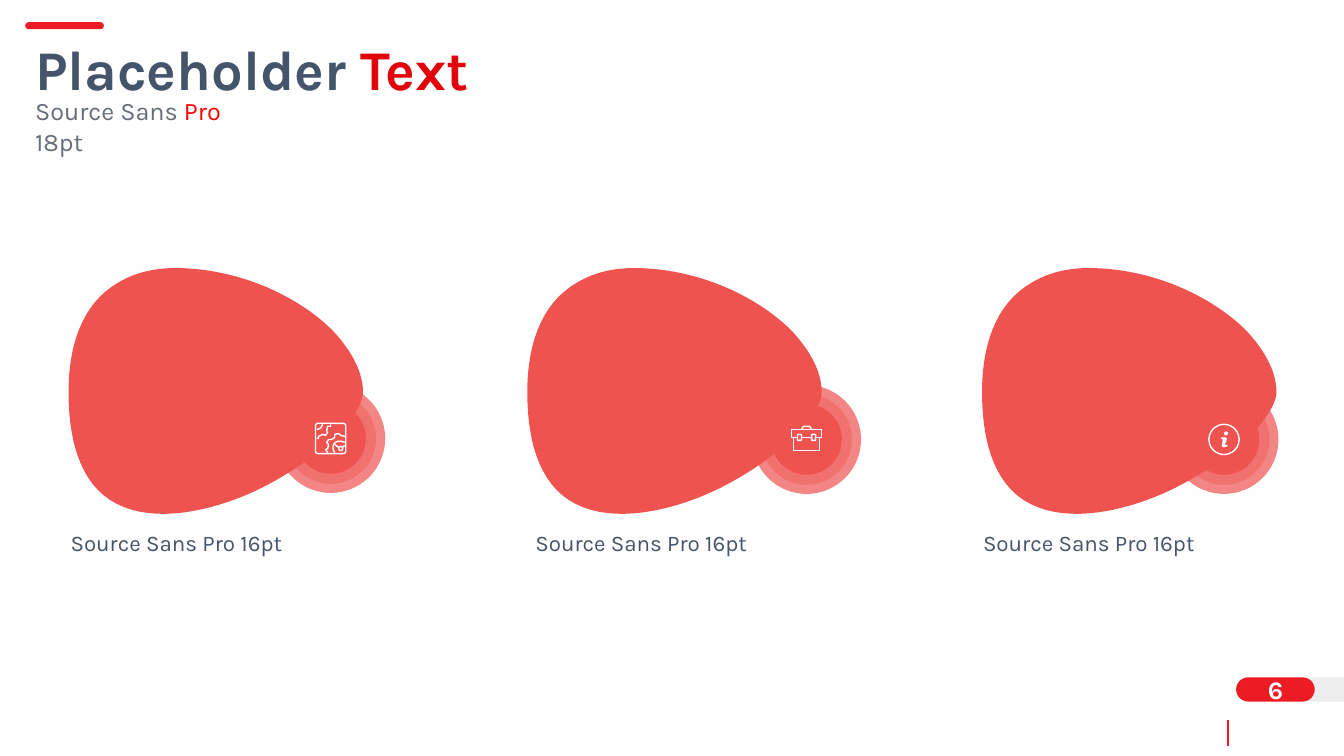
import pptx
import pptx.util
import pptx.dml.color
import pptx.enum.shapes
import pptx.enum.text
import pptx.oxml.ns
import lxml.etree

Inches = pptx.util.Inches
KINDS = pptx.enum.shapes.MSO_SHAPE
ALIGN = pptx.enum.text.PP_ALIGN
RED, CORAL, SLATE, GREY, WHITE = "ED1C24", "EF5350", "44546A", "656D78", "FFFFFF"
FONT = "Karla"
STROKE = 1

BLOB = [(1.06, 0),
        (1.32, 0, 1.58, 0.05, 1.81, 0.13), (2.1, 0.23, 2.4, 0.4, 2.62, 0.62),
        (2.77, 0.78, 2.92, 1, 2.92, 1.23), (2.92, 1.38, 2.73, 1.6, 2.62, 1.7),
        (2.39, 1.91, 2.1, 2.1, 1.81, 2.23), (1.43, 2.4, 0.87, 2.54, 0.48, 2.34),
        (0.08, 2.14, 0, 1.63, 0, 1.23), (0, 0.81, 0.11, 0.36, 0.5, 0.14),
        (0.67, 0.04, 0.86, 0, 1.06, 0)]

# Icon strokes are measured from the centre of their badge.
MAP_LINES = [
    [(-0.08, -0.14), (-0.09, -0.11, -0.11, -0.09, -0.14, -0.09)],
    [(0, -0.14), (0, -0.12), (-0.03, -0.12), (-0.04, -0.08), (-0.03, -0.06),
     (-0.05, -0.03), (-0.08, -0.04), (-0.12, -0.02), (-0.12, 0), (-0.14, 0)],
    [(0.14, -0.02), (0.1, -0.03), (0.08, -0.05), (0.04, -0.04), (0.04, -0.01),
     (0.01, 0.01), (-0.02, 0.01), (-0.04, 0.04), (-0.02, 0.06), (-0.03, 0.1),
     (-0.05, 0.11), (-0.03, 0.14)],
    [(0.14, 0.04), (0.06, 0, -0.01, 0.06, 0.04, 0.14)],
    [(0.04, 0.06), (0.08, 0.09)],
    [(0.14, 0.07), (0.11, 0.09)],
]
CASE_LINES = [
    [(-0.05, -0.1), (-0.03, -0.13), (0.03, -0.13), (0.05, -0.1)],
    [(-0.13, -0.02), (-0.13, 0.11), (0.13, 0.11), (0.13, -0.02)],
    [(-0.09, -0.02), (-0.15, -0.02), (-0.15, -0.1), (0.15, -0.1),
     (0.15, -0.02), (0.09, -0.02)],
    [(-0.05, -0.02), (0.05, -0.02)],
]
STEM = [(-0.03, -0.02), (0.02, -0.02), (0.03, 0), (0.01, 0.05), (0.04, 0.06),
        (0.02, 0.08, -0.03, 0.09, -0.02, 0.05), (-0.01, 0), (-0.03, -0.01)]


def color(code):
    return pptx.dml.color.RGBColor.from_string(code)


def paint(shape, fill=None, line=None, alpha=None):
    shape.shadow.inherit = False
    if fill:
        shape.fill.solid()
        shape.fill.fore_color.rgb = color(fill)
    else:
        shape.fill.background()
    if line:
        shape.line.color.rgb = color(line)
        shape.line.width = pptx.util.Pt(STROKE)
    else:
        shape.line.fill.background()
    if alpha:
        tone = shape.fill._xPr.find(".//" + pptx.oxml.ns.qn("a:srgbClr"))
        mark = lxml.etree.SubElement(tone, pptx.oxml.ns.qn("a:alpha"))
        mark.set("val", str(alpha * 1000))


def block(slide, kind, left, top, width, height, fill=None, line=None,
          alpha=None, curve=None):
    shape = slide.shapes.add_shape(kind, Inches(left), Inches(top),
                                   Inches(width), Inches(height))
    if curve is not None:
        shape.adjustments[0] = curve
    paint(shape, fill, line, alpha)
    return shape


def disc(slide, x, y, size, **style):
    block(slide, KINDS.OVAL, x - size / 2, y - size / 2, size, size, **style)


def trace(steps, count=16):
    """Turn line ends (x, y) and cubic steps (six numbers) into points."""
    points = [steps[0]]
    for step in steps[1:]:
        if len(step) == 2:
            points.append(step)
            continue
        start = points[-1]
        for i in range(1, count + 1):
            t = i / count
            u = 1 - t
            points.append(tuple(
                u ** 3 * start[k] + 3 * u * u * t * step[k]
                + 3 * u * t * t * step[k + 2] + t ** 3 * step[k + 4]
                for k in (0, 1)))
    return points


def outline(slide, x, y, steps, fill=None, line=None):
    points = [(Inches(x + a), Inches(y + b)) for a, b in trace(steps)]
    pen = slide.shapes.build_freeform(*points[0])
    pen.add_line_segments(points[1:], close=bool(fill))
    paint(pen.convert_to_shape(), fill, line)


def label(slide, left, top, width, height, runs, size, bold=False,
          align=ALIGN.LEFT, inset=0.1, space=None):
    box = slide.shapes.add_textbox(Inches(left), Inches(top),
                                   Inches(width), Inches(height))
    frame = box.text_frame
    frame.word_wrap = True
    frame.margin_left = Inches(inset)
    line = frame.paragraphs[0]
    line.alignment = align
    if space:
        line.line_spacing = pptx.util.Pt(space)
    for text, tone in runs:
        run = line.add_run()
        run.text = text
        run.font.name = FONT
        run.font.size = pptx.util.Pt(size)
        run.font.bold = bold
        run.font.color.rgb = color(tone)


def badge(slide, x, y):
    for size, alpha in ((1.08, 70), (0.9, 40), (0.7, None)):
        disc(slide, x, y, size, fill=CORAL, alpha=alpha)


def map_icon(slide, x, y):
    block(slide, KINDS.ROUNDED_RECTANGLE, x - 0.15, y - 0.15, 0.3, 0.3,
          line=WHITE, curve=0.08)
    for steps in MAP_LINES:
        outline(slide, x, y, steps, line=WHITE)
    disc(slide, x + 0.1, y + 0.1, 0.04, line=WHITE)


def case_icon(slide, x, y):
    for steps in CASE_LINES:
        outline(slide, x, y, steps, line=WHITE)
    for side in (-0.07, 0.07):
        block(slide, KINDS.ROUNDED_RECTANGLE, x + side - 0.02, y - 0.05,
              0.04, 0.06, line=WHITE, curve=0.2)


def info_icon(slide, x, y):
    disc(slide, x, y, 0.3, line=WHITE)
    disc(slide, x + 0.02, y - 0.06, 0.04, fill=WHITE)
    outline(slide, x, y, STEM, fill=WHITE)


def footer(slide):
    rule = slide.shapes.add_connector(
        pptx.enum.shapes.MSO_CONNECTOR.STRAIGHT,
        Inches(12.18), Inches(7.14), Inches(12.18), Inches(7.4))
    rule.line.color.rgb = color(RED)
    rule.line.width = pptx.util.Pt(1.25)
    lxml.etree.SubElement(rule._element.spPr, pptx.oxml.ns.qn("a:effectLst"))
    tab = block(slide, KINDS.ROUND_2_SAME_RECTANGLE, 12.99, 6.62, 0.24, 0.44,
                fill="A6A6A6", alpha=20, curve=0.5)
    tab.rotation = 270
    block(slide, KINDS.ROUNDED_RECTANGLE, 12.26, 6.72, 0.78, 0.24, fill=RED,
          curve=0.5)
    label(slide, 12.29, 6.64, 0.72, 0.4, [("6", WHITE)], 18, bold=True,
          align=ALIGN.CENTER)


def main():
    deck = pptx.Presentation()
    deck.slide_width, deck.slide_height = Inches(13.33), Inches(7.5)
    slide = deck.slides.add_slide(deck.slide_layouts[6])
    footer(slide)
    block(slide, KINDS.ROUNDED_RECTANGLE, 0.25, 0.22, 0.78, 0.07, fill=RED,
          curve=0.5)
    # Left of blob, left of caption, centre of badge, icon
    cards = [(0.68, 0.7, 3.28, 4.35, map_icon),
             (5.23, 5.31, 8, 4.36, case_icon),
             (9.74, 9.75, 12.14, 4.36, info_icon)]
    for left, text_left, x, y, icon in cards:
        outline(slide, left, 2.66, BLOB, fill=CORAL)
        label(slide, text_left, 5.28, 3.04, 0.94,
              [("Source Sans Pro 16pt", SLATE)], 16, inset=0, space=13.7)
        badge(slide, x, y)
        icon(slide, x, y)
    label(slide, 0.25, 0.29, 8.26, 0.77,
          [("Placeholder ", SLATE), ("Text", "E2020C")], 40, bold=True)
    label(slide, 0.25, 0.9, 2.44, 0.4,
          [("Source Sans ", GREY), ("Pro", "FF0000"), (" 18pt", GREY)], 18)
    deck.save("out.pptx")


if __name__ == "__main__":
    main()
